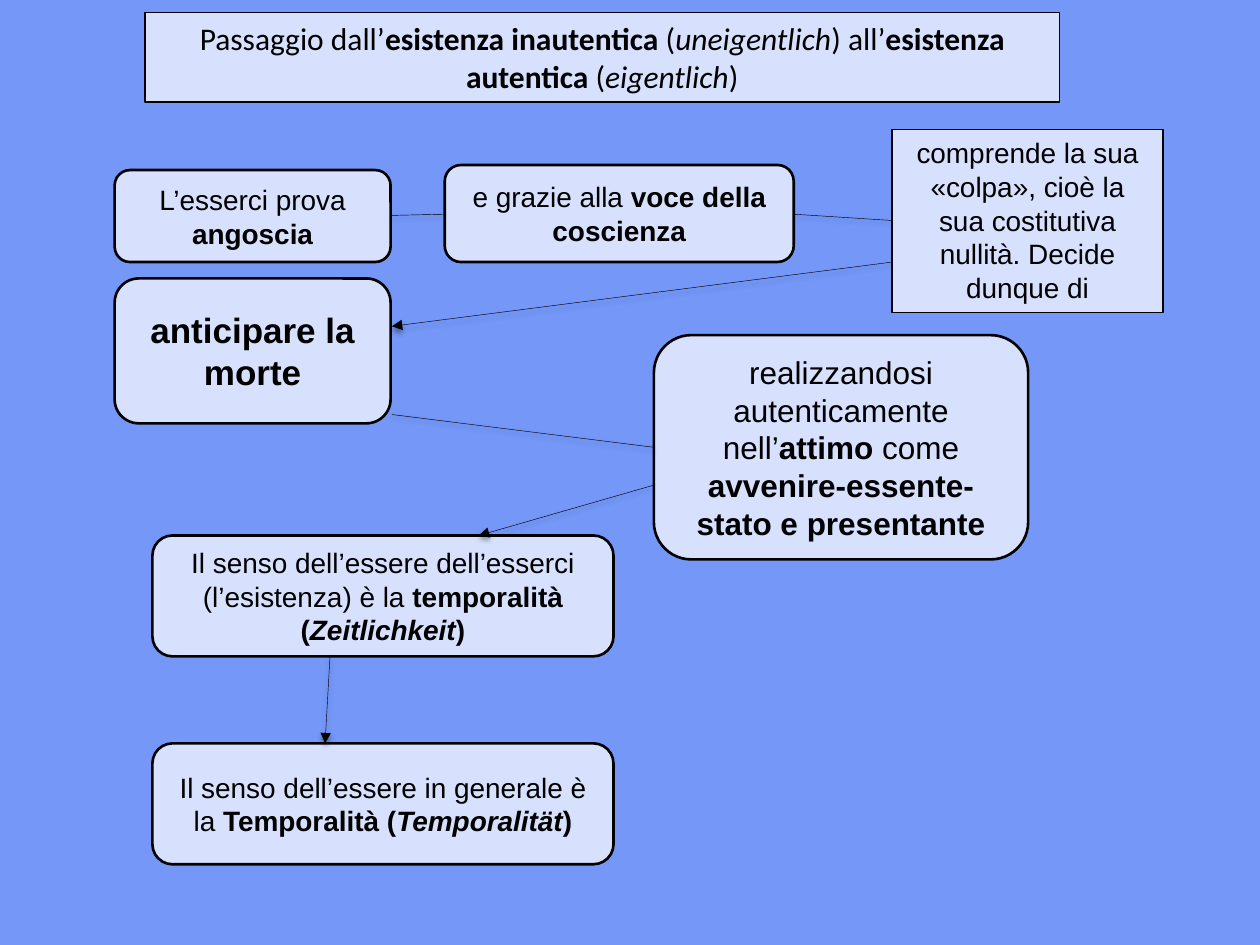
import pptx
import pptx.dml.color
import pptx.enum.shapes
import pptx.enum.text
import pptx.oxml
import pptx.oxml.ns
import pptx.util
from dataclasses import dataclass

Inches = pptx.util.Inches
Pt = pptx.util.Pt
ROUNDED = pptx.enum.shapes.MSO_SHAPE.ROUNDED_RECTANGLE
RECTANGLE = pptx.enum.shapes.MSO_SHAPE.RECTANGLE


@dataclass(frozen=True)
class Theme:
    background: str = "7497F8"
    panel: str = "D7E1FD"
    ink: str = "000000"
    heading_font: str = "Calibri"
    body_font: str = "Arial"
    body: int = 16
    large: int = 18
    emphasis: int = 20
    thick: float = 1.5
    thin: float = 0.75
    hairline: float = 0.25


THEME = Theme()

STYLES = {
    "plain": {"bold": False, "italic": False},
    "bold": {"bold": True, "italic": False},
    "italic": {"bold": False, "italic": True},
    "bold italic": {"bold": True, "italic": True},
}

HEADING = [
    ("Passaggio dall’", "plain"), ("esistenza inautentica ", "bold"),
    ("(", "plain"), ("uneigentlich", "italic"), (") all’", "plain"),
    ("esistenza autentica", "bold"), (" (", "plain"),
    ("eigentlich", "italic"), (")", "plain"),
]

# Each concept: box (left, top, width, height), outline shape, size, runs
CONCEPTS = [
    ((0.91, 1.35, 2.19, 0.73), ROUNDED, THEME.body,
     [("L’esserci prova", "plain"), (" angoscia", "bold")]),
    ((3.53, 1.31, 2.77, 0.77), ROUNDED, THEME.body,
     [("e grazie alla ", "plain"), ("voce della coscienza", "bold")]),
    ((7.08, 1.03, 2.15, 1.45), RECTANGLE, THEME.body,
     [("comprende la sua «colpa», cioè la sua costitutiva nullità. "
       "Decide dunque di", "plain")]),
    ((0.91, 2.21, 2.19, 1.15), ROUNDED, THEME.emphasis,
     [("anticipare la morte", "bold")]),
    ((5.19, 2.66, 2.97, 1.78), ROUNDED, THEME.large,
     [("realizzandosi autenticamente nell’", "plain"), ("attimo ", "bold"),
      ("come", "plain"), (" avvenire-essente-stato e presentante", "bold")]),
    ((1.21, 4.25, 3.66, 0.96), ROUNDED, THEME.body,
     [("Il senso dell’essere dell’esserci (l’esistenza) è la ", "plain"),
      ("temporalità (", "bold"), ("Zeitlichkeit", "bold italic"), (")", "bold")]),
    ((1.21, 5.9, 3.66, 0.96), ROUNDED, THEME.body,
     [("Il senso dell’essere in generale è la ", "plain"),
      ("Temporalità (", "bold"), ("Temporalität", "bold italic"), (")", "bold")]),
]

# Each link: start, end, whether it ends in an arrowhead
LINKS = [
    ((3.1, 1.71), (3.53, 1.7), False),
    ((6.3, 1.7), (7.08, 1.75), False),
    ((7.08, 2.08), (3.11, 2.59), True),
    ((3.11, 3.29), (5.19, 3.55), False),
    ((5.19, 3.85), (3.8, 4.25), True),
    ((2.62, 5.2), (2.58, 5.9), True),
]

SHADOW_XML = (
    f'<a:effectLst {pptx.oxml.ns.nsdecls("a")}>'
    '<a:outerShdw blurRad="39370" dist="20320" dir="5400000" rotWithShape="0">'
    f'<a:srgbClr val="{THEME.ink}"><a:alpha val="38000"/></a:srgbClr>'
    '</a:outerShdw></a:effectLst>'
)
ARROWHEAD_XML = f'<a:tailEnd {pptx.oxml.ns.nsdecls("a")} type="triangle"/>'


def rgb(value):
    return pptx.dml.color.RGBColor.from_string(value)


def set_attributes(target, values):
    for name, value in values.items():
        setattr(target, name, value)


def paint_panel(panel, outline):
    panel.fill.solid()
    panel.fill.fore_color.rgb = rgb(THEME.panel)
    panel.line.color.rgb = rgb(THEME.ink)
    panel.line.width = Pt(outline)


def write_runs(frame, runs, font, size, anchor):
    set_attributes(frame, {
        "word_wrap": True,
        "auto_size": pptx.enum.text.MSO_AUTO_SIZE.NONE,
        "vertical_anchor": anchor,
        "margin_left": Inches(0.1), "margin_right": Inches(0.1),
        "margin_top": Inches(0.05), "margin_bottom": Inches(0.05),
    })
    paragraph = frame.paragraphs[0]
    paragraph.alignment = pptx.enum.text.PP_ALIGN.CENTER
    for text, style in runs:
        run = paragraph.add_run()
        run.text = text
        set_attributes(run.font, {"name": font, "size": Pt(size), **STYLES[style]})
        run.font.color.rgb = rgb(THEME.ink)


def add_heading(slide, box):
    heading = slide.shapes.title
    sides = ("left", "top", "width", "height")
    set_attributes(heading, dict(zip(sides, map(Inches, box))))
    paint_panel(heading, THEME.thin)
    write_runs(heading.text_frame, HEADING, THEME.heading_font, THEME.large,
               pptx.enum.text.MSO_ANCHOR.TOP)


def add_concept(slide, box, outline_shape, size, runs):
    concept = slide.shapes.add_shape(outline_shape, *map(Inches, box))
    concept.shadow.inherit = False
    rounded = outline_shape == ROUNDED
    paint_panel(concept, THEME.thick if rounded else THEME.thin)
    anchors = pptx.enum.text.MSO_ANCHOR
    write_runs(concept.text_frame, runs, THEME.body_font, size,
               anchors.MIDDLE if rounded else anchors.TOP)


def add_link(slide, start, end, has_arrowhead):
    link = slide.shapes.add_connector(
        pptx.enum.shapes.MSO_CONNECTOR.STRAIGHT, *map(Inches, start + end))
    link.line.color.rgb = rgb(THEME.ink)
    link.line.width = Pt(THEME.hairline)
    properties = link.element.spPr
    if has_arrowhead:
        stroke = properties.find(pptx.oxml.ns.qn("a:ln"))
        stroke.append(pptx.oxml.parse_xml(ARROWHEAD_XML))
    properties.append(pptx.oxml.parse_xml(SHADOW_XML))


def build_concept_map(presentation):
    slide = presentation.slides.add_slide(
        presentation.slide_layouts.get_by_name("Title Only"))
    slide.background.fill.solid()
    slide.background.fill.fore_color.rgb = rgb(THEME.background)

    # Heading across the top
    add_heading(slide, (1.15, 0.1, 7.26, 0.71))

    # Concepts, then the links between them
    for concept in CONCEPTS:
        add_concept(slide, *concept)
    for link in LINKS:
        add_link(slide, *link)


def main():
    presentation = pptx.Presentation()
    presentation.slide_width = Inches(10)
    presentation.slide_height = Inches(7.5)
    build_concept_map(presentation)
    presentation.save("out.pptx")


if __name__ == "__main__":
    main()
